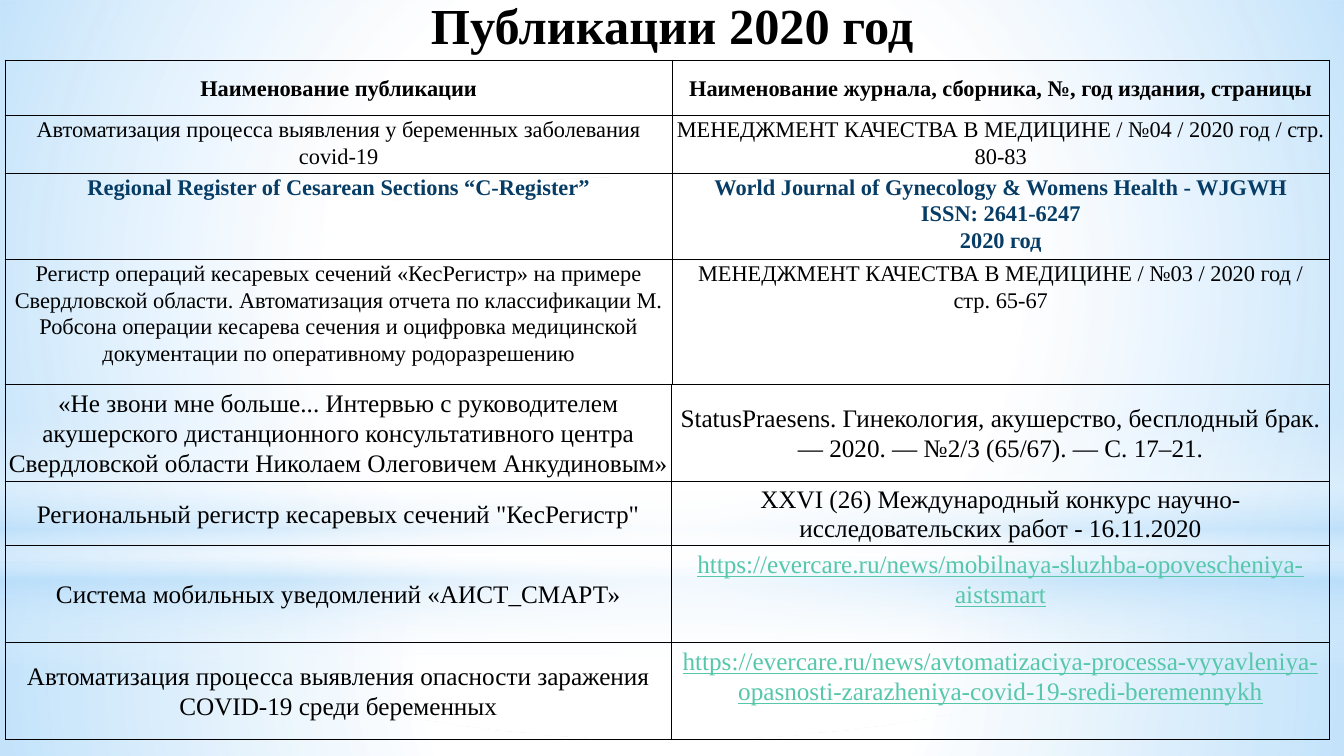
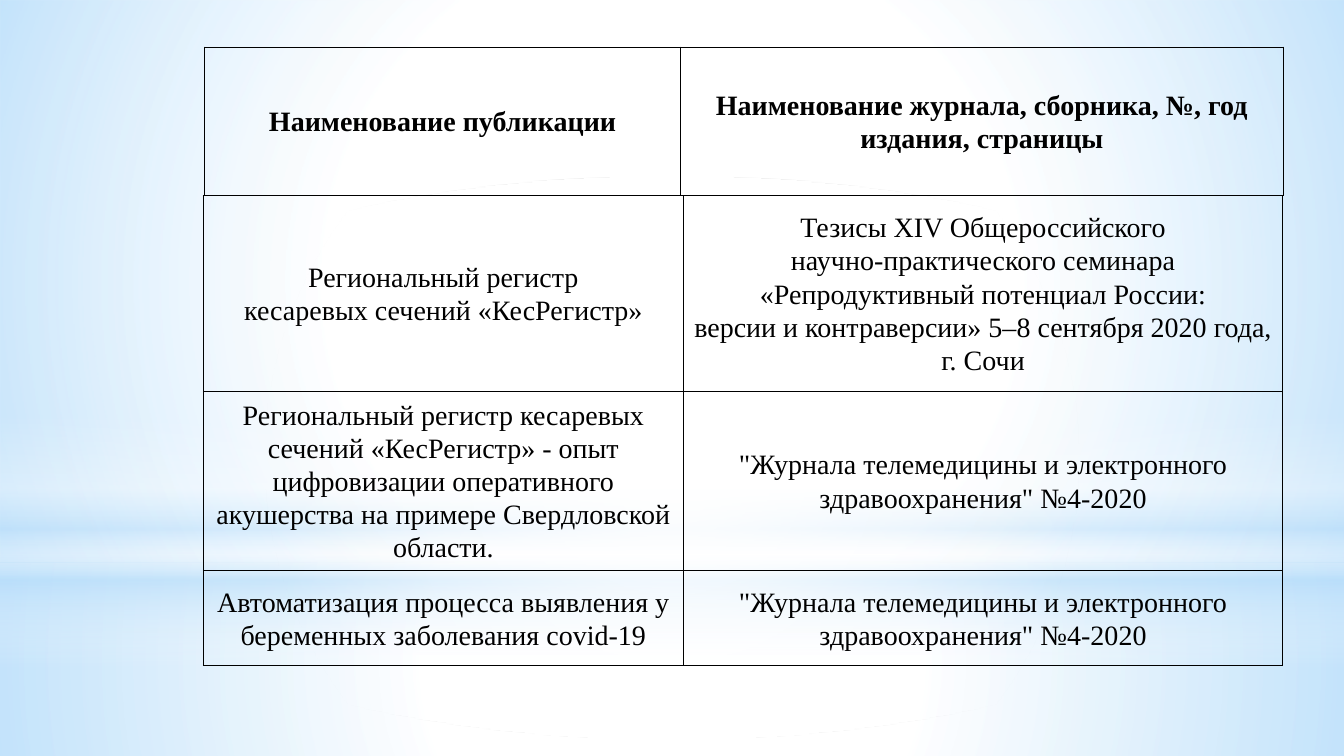
from dataclasses import dataclass

from lxml import etree
from pptx import Presentation
from pptx import util as u
from pptx.dml.color import RGBColor
from pptx.enum import shapes, text
from pptx.oxml import ns


@dataclass(frozen=True)
class Theme:
    font: str = "Times New Roman"
    ink: str = "000000"
    navy: str = "073C65"
    link: str = "56C7AA"
    white: str = "FFFFFF"
    sky: str = "B4DCFA"
    title: int = 36
    small: int = 16
    medium: int = 18
    large: int = 20
    spacing: float = 1.07
    border: float = 1


THEME = Theme()


@dataclass(frozen=True)
class Glow:
    kind: shapes.MSO_SHAPE
    top: float
    height: float
    stops: tuple[tuple[int, str, int], ...]
    angle: int | None = None


@dataclass(frozen=True)
class Entry:
    text: str
    color: str = THEME.ink
    bold: bool = False
    underline: bool = False
    middle: bool = True
    bottom: float = 0


@dataclass(frozen=True)
class Grid:
    left: float
    top: float
    cols: tuple[float, ...]
    rows: tuple[float, ...]
    size: int
    entries: tuple[tuple[Entry, ...], ...]


WIDTH, HEIGHT = 33.87, 19.05
RECT, OVAL = shapes.MSO_SHAPE.RECTANGLE, shapes.MSO_SHAPE.OVAL

GLOWS = (
    Glow(RECT, 14.17, 4.88, ((0, THEME.white, 91), (37, THEME.white, 76), (100, THEME.sky, 79))),
    Glow(RECT, 0, 14.17, ((0, THEME.white, 89), (48, THEME.white, 62), (100, THEME.sky, 79))),
    Glow(RECT, 10.46, 6.35,
         ((0, THEME.white, 0), (29, THEME.white, 30), (45, THEME.sky, 40),
          (55, THEME.white, 26), (65, THEME.sky, 60), (100, THEME.white, 0)), angle=90),
    Glow(OVAL, 4.45, 14.17, ((0, THEME.white, 100), (56, THEME.white, 0))),
)


def plain(words: str) -> Entry:
    return Entry(words, middle=False)


def accent(words: str) -> Entry:
    return Entry(words, THEME.navy, bold=True, middle=False)


def link(words: str) -> Entry:
    return Entry(words, THEME.link, underline=True, bottom=0.74)


HEADER = (
    Entry("Наименование публикации", bold=True),
    Entry("Наименование журнала, сборника, №, год издания, страницы", bold=True),
)
COVID = "Автоматизация процесса выявления у беременных заболевания covid-19"
TELEMED = Entry('"Журнала телемедицины и электронного здравоохранения" №4-2020')

ARTICLES = Grid(0.13, 1.52, (16.81, 16.56), (1.4, 1.45, 2.18, 3.13), THEME.small, (
    HEADER,
    (plain(COVID),
     plain("МЕНЕДЖМЕНТ КАЧЕСТВА В МЕДИЦИНЕ / №04 / 2020 год / стр. 80-83")),
    (accent("Regional Register of Cesarean Sections “С-Registеr”"),
     accent("World Journal of Gynecology & Womens Health - WJGWH\nISSN: 2641-6247\n2020 год")),
    (plain("Регистр операций кесаревых сечений «КесРегистр» на примере Свердловской области. "
           "Автоматизация отчета по классификации М. Робсона операции кесарева сечения и "
           "оцифровка медицинской\nдокументации по оперативному родоразрешению"),
     plain("МЕНЕДЖМЕНТ КАЧЕСТВА В МЕДИЦИНЕ / №03 / 2020 год /\nстр. 65-67")),
))

MEDIA = Grid(0.13, 9.68, (16.79, 16.59), (2.46, 1.6, 2.44, 2.46), THEME.medium, (
    (Entry("«Не звони мне больше... Интервью с руководителем акушерского дистанционного "
           "консультативного центра Свердловской области Николаем Олеговичем Анкудиновым»"),
     Entry("StatusPraesens. Гинекология, акушерство, бесплодный брак. "
           "— 2020. — №2/3 (65/67). — С. 17–21.")),
    (Entry('Региональный регистр кесаревых сечений "КесРегистр"'),
     Entry("XXVI (26) Международный конкурс научно-исследовательских работ - 16.11.2020")),
    (Entry("Система мобильных уведомлений «АИСТ_СМАРТ»"),
     link("https://evercare.ru/news/mobilnaya-sluzhba-opovescheniya-aistsmart")),
    (Entry("Автоматизация процесса выявления опасности заражения COVID-19 среди беременных"),
     link("https://evercare.ru/news/avtomatizaciya-processa-vyyavleniya-"
          "opasnosti-zarazheniya-covid-19-sredi-beremennykh")),
))

THESES = Grid(5.13, 4.93, (12.09, 15.11), (4.93, 4.52, 2.39), THEME.large, (
    (Entry("Региональный регистр\vкесаревых сечений «КесРегистр»"),
     Entry("Тезисы XIV Общероссийского\nнаучно-практического семинара\n"
           "«Репродуктивный потенциал России:\n"
           "версии и контраверсии» 5–8 сентября 2020 года,\nг. Сочи")),
    (Entry("Региональный регистр кесаревых сечений «КесРегистр» - опыт цифровизации "
           "оперативного акушерства на примере Свердловской области."), TELEMED),
    (Entry(COVID), TELEMED),
))

THESES_HEADER = Grid(5.16, 1.19, (11.99, 15.19), (3.73,), THEME.large, (HEADER,))


def add_node(parent, tag: str, **attrs):
    return etree.SubElement(parent, ns.qn(tag), {k: str(v) for k, v in attrs.items()})


def gradient(glow: Glow):
    fill = etree.Element(ns.qn("a:gradFill"), rotWithShape="1")
    stops = add_node(fill, "a:gsLst")
    for pos, color, alpha in glow.stops:
        stop = add_node(stops, "a:gs", pos=pos * 1000)
        add_node(add_node(stop, "a:srgbClr", val=color), "a:alpha", val=alpha * 1000)
    if glow.angle is None:
        center = add_node(fill, "a:path", path="circle")
        add_node(center, "a:fillToRect", l=50000, t=50000, r=50000, b=50000)
    else:
        add_node(fill, "a:lin", ang=glow.angle * 60000, scaled=0)
    return fill


def add_backdrop(prs, slide) -> None:
    tree = prs.slide_master.shapes.element
    for i, glow in enumerate(GLOWS):
        sp = slide.shapes.add_shape(glow.kind, 0, u.Cm(glow.top), u.Cm(WIDTH), u.Cm(glow.height))
        sp.shadow.inherit = False
        sp.line.fill.background()
        sp.fill.background()
        props = sp.element.spPr
        props.replace(props.find(ns.qn("a:noFill")), gradient(glow))
        sp.element.nvSpPr.cNvPr.set("id", str(100 + i))
        tree.insert(2 + i, sp.element)


def style_paragraph(p, size: int, color: str, bold: bool, underline: bool = False) -> None:
    p.alignment = text.PP_ALIGN.CENTER
    f = p.font
    f.name, f.size, f.bold, f.underline = THEME.font, u.Pt(size), bold, underline
    f.color.rgb = RGBColor.from_string(color)


def fill_cell(cell, entry: Entry, size: int) -> None:
    cell.margin_left = cell.margin_right = u.Cm(0.05)
    cell.margin_top, cell.margin_bottom = 0, u.Cm(entry.bottom)
    anchor = text.MSO_ANCHOR
    cell.vertical_anchor = anchor.MIDDLE if entry.middle else anchor.TOP
    cell.fill.background()
    cell.text_frame.text = entry.text
    for p in cell.text_frame.paragraphs:
        style_paragraph(p, size, entry.color, entry.bold, entry.underline)
        p.line_spacing = THEME.spacing


def add_borders(frame) -> None:
    for props in frame.element.iter(ns.qn("a:tcPr")):
        for i, side in enumerate("LRTB"):
            ln = etree.Element(ns.qn(f"a:ln{side}"), w=str(u.Pt(THEME.border)))
            add_node(add_node(ln, "a:solidFill"), "a:srgbClr", val=THEME.ink)
            props.insert(i, ln)


def add_grid(slide, grid: Grid) -> None:
    frame = slide.shapes.add_table(
        len(grid.rows), len(grid.cols), u.Cm(grid.left), u.Cm(grid.top),
        u.Cm(sum(grid.cols)), u.Cm(sum(grid.rows)))
    table = frame.table
    table.first_row = table.horz_banding = False
    for col, width in zip(table.columns, grid.cols):
        col.width = u.Cm(width)
    for row, height, entries in zip(table.rows, grid.rows, grid.entries):
        row.height = u.Cm(height)
        for cell, entry in zip(row.cells, entries):
            fill_cell(cell, entry, grid.size)
    add_borders(frame)


def add_title(slide, words: str) -> None:
    sp = slide.shapes.title
    sp.left, sp.top, sp.width, sp.height = u.Cm(10.54), u.Cm(-0.28), u.Cm(12.8), u.Cm(1.8)
    tf = sp.text_frame
    tf.text = words
    tf.word_wrap = False
    tf.auto_size = text.MSO_AUTO_SIZE.NONE
    tf.vertical_anchor = text.MSO_ANCHOR.MIDDLE
    style_paragraph(tf.paragraphs[0], THEME.title, THEME.ink, bold=True)


def main() -> None:
    prs = Presentation()
    prs.slide_width, prs.slide_height = u.Cm(WIDTH), u.Cm(HEIGHT)
    title_only, blank = prs.slide_layouts[5], prs.slide_layouts[6]

    s = prs.slides.add_slide(title_only)
    add_backdrop(prs, s)
    add_title(s, "Публикации 2020 год")
    add_grid(s, ARTICLES)
    add_grid(s, MEDIA)

    s = prs.slides.add_slide(blank)
    add_grid(s, THESES)
    add_grid(s, THESES_HEADER)

    prs.save("out.pptx")


if __name__ == "__main__":
    main()
